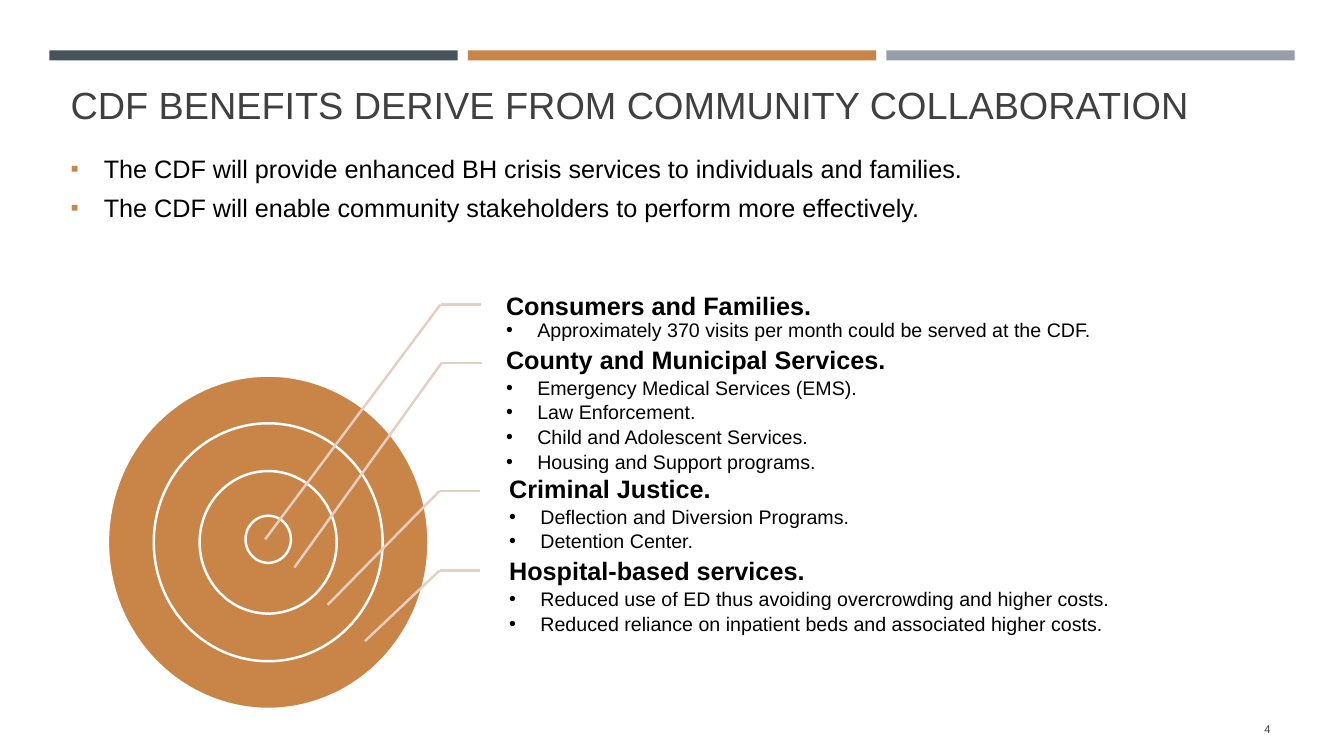
from lxml.etree import SubElement as Sub
from pptx import Presentation as Deck
from pptx.dml.color import RGBColor as RGB
from pptx.enum.shapes import MSO_CONNECTOR as Link, MSO_SHAPE as Form
from pptx.enum.text import MSO_ANCHOR as Anchor, MSO_AUTO_SIZE as Fit, PP_ALIGN as Align
from pptx.oxml.ns import qn
from pptx.util import Inches, Pt

SLATE = RGB(0x46, 0x53, 0x59)
COPPER = RGB(0xC9, 0x84, 0x47)
STEEL = RGB(0x96, 0x9F, 0xA7)
BLUSH = RGB(0xE6, 0xCE, 0xC1)
GREY = RGB(0x40, 0x40, 0x40)
BLACK = RGB(0, 0, 0)
WHITE = RGB(0xFF, 0xFF, 0xFF)

TITLE = {"size": Pt(27), "color": GREY, "bold": False}
BODY = {"size": Pt(18), "color": BLACK, "bold": False}
HEAD = {"size": Pt(18), "color": BLACK, "bold": True}
ITEM = {"size": Pt(14), "color": BLACK, "bold": False}
PAGE = {"size": Pt(8), "color": GREY, "bold": False}

AIMS = [
    "The CDF will provide enhanced BH crisis services to individuals and families.",
    "The CDF will enable community stakeholders to perform more effectively.",
]
RINGS = [(3.18, 5.38), (2.27, 5.38), (1.36, 5.38), (0.45, 5.35)]
GROUPS = [
    ((4.91, 2.89, 7.76, 0.51), Anchor.TOP, 0.9, (4.37, 3.02), (2.63, 5.35),
     "Consumers and Families.",
     ["Approximately 370 visits per month could be served at the CDF."]),
    ((4.91, 3.4, 7.76, 1.34), Anchor.MIDDLE, 1.05, (4.38, 3.6), (2.92, 5.63),
     "County and Municipal Services.",
     ["Emergency Medical Services (EMS).", "Law Enforcement.",
      "Child and Adolescent Services.", "Housing and Support programs."]),
    ((4.94, 4.71, 7.76, 0.79), Anchor.MIDDLE, 1.05, (4.36, 4.87), (3.25, 6),
     "Criminal Justice.",
     ["Deflection and Diversion Programs.", "Detention Center."]),
    ((4.94, 5.53, 7.76, 0.79), Anchor.MIDDLE, 1.05, (4.36, 5.66), (3.62, 6.36),
     "Hospital-based services.",
     ["Reduced use of ED thus avoiding overcrowding and higher costs.",
      "Reduced reliance on inpatient beds and associated higher costs."]),
]


def place(shape, box):
    for name, size in zip(("left", "top", "width", "height"), box):
        setattr(shape, name, Inches(size))


def setup(frame, anchor, pads=(0.1, 0.05, 0.1, 0.05)):
    frame.word_wrap = True
    frame.auto_size = Fit.NONE
    frame.vertical_anchor = anchor
    for side, pad in zip(("left", "top", "right", "bottom"), pads):
        setattr(frame, "margin_" + side, Inches(pad))


def write(para, text, style, space=1.0, before=0, align=Align.LEFT):
    para.alignment = align
    para.line_spacing = space
    para.space_before = Pt(before)
    para.space_after = Pt(0)
    run = para.add_run()
    run.text = text
    run.font.name = "Arial"
    for name, value in style.items():
        if name == "color":
            run.font.color.rgb = value
        else:
            setattr(run.font, name, value)


def bullet(para, mark, indent, color, scale):
    props = para._p.get_or_add_pPr()
    props.set("marL", str(Inches(indent)))
    props.set("indent", str(-Inches(indent)))
    tint = Sub(props, qn("a:buClr"))
    Sub(tint, qn("a:srgbClr"), val=str(color))
    Sub(props, qn("a:buSzPct"), val=str(scale * 1000))
    Sub(props, qn("a:buFont"), typeface="Arial")
    Sub(props, qn("a:buChar"), char=mark)


def draw(slide, form, box, fill, edge=None):
    shape = slide.shapes.add_shape(form, *map(Inches, box))
    shape.shadow.inherit = False
    shape.fill.solid()
    shape.fill.fore_color.rgb = fill
    if edge is None:
        shape.line.fill.background()
    else:
        shape.line.color.rgb = edge
        shape.line.width = Pt(1.75)


def link(slide, start, end):
    line = slide.shapes.add_connector(Link.STRAIGHT, *map(Inches, start + end))
    line.line.color.rgb = BLUSH
    line.line.width = Pt(1.75)
    Sub(line._element.spPr, qn("a:effectLst"))


def add_box(slide, box, anchor, pads):
    frame = slide.shapes.add_textbox(*map(Inches, box)).text_frame
    setup(frame, anchor, pads)
    return frame


def add_group(slide, box, anchor, space, bend, tip, head, items):
    frame = add_box(slide, box, anchor, (0.11, 0.02, 0.02, 0.02))
    write(frame.paragraphs[0], head, HEAD, 0.9)
    for item in items:
        para = frame.add_paragraph()
        write(para, item, ITEM, space)
        bullet(para, "•", 0.31, BLACK, 100)
    link(slide, bend, (bend[0] + 0.4, bend[1]))
    link(slide, bend, tip)


def main():
    deck = Deck()
    deck.slide_width, deck.slide_height = Inches(13.33), Inches(7.5)
    slide = deck.slides.add_slide(deck.slide_layouts[1])

    for col, fill in enumerate((SLATE, COPPER, STEEL)):
        draw(slide, Form.RECTANGLE, (0.49 + 4.15 * col, 0.5, 4.05, 0.1), fill)

    title = slide.shapes.title
    place(title, (0.6, 0.8, 12.06, 0.51))
    setup(title.text_frame, Anchor.BOTTOM)
    write(title.text_frame.paragraphs[0],
          "CDF BENEFITS DERIVE FROM COMMUNITY COLLABORATION", TITLE)

    body = slide.placeholders[1]
    place(body, (0.6, 1.41, 12.06, 0.81))
    frame = body.text_frame
    setup(frame, Anchor.TOP)
    for row, aim in enumerate(AIMS):
        para = frame.add_paragraph() if row else frame.paragraphs[0]
        write(para, aim, BODY, 1.2, 2)
        bullet(para, "▪", 0.33, COPPER, 92)

    for wide, mid in RINGS:
        high = wide * 1.04
        draw(slide, Form.OVAL, (2.66 - wide / 2, mid - high / 2, wide, high),
             COPPER, WHITE)
    for group in GROUPS:
        add_group(slide, *group)

    page = add_box(slide, (11.55, 7.03, 1.15, 0.4), Anchor.MIDDLE,
                   (0.1, 0.05, 0.1, 0.05))
    write(page.paragraphs[0], "4", PAGE, align=Align.RIGHT)
    deck.save("out.pptx")


if __name__ == "__main__":
    main()
